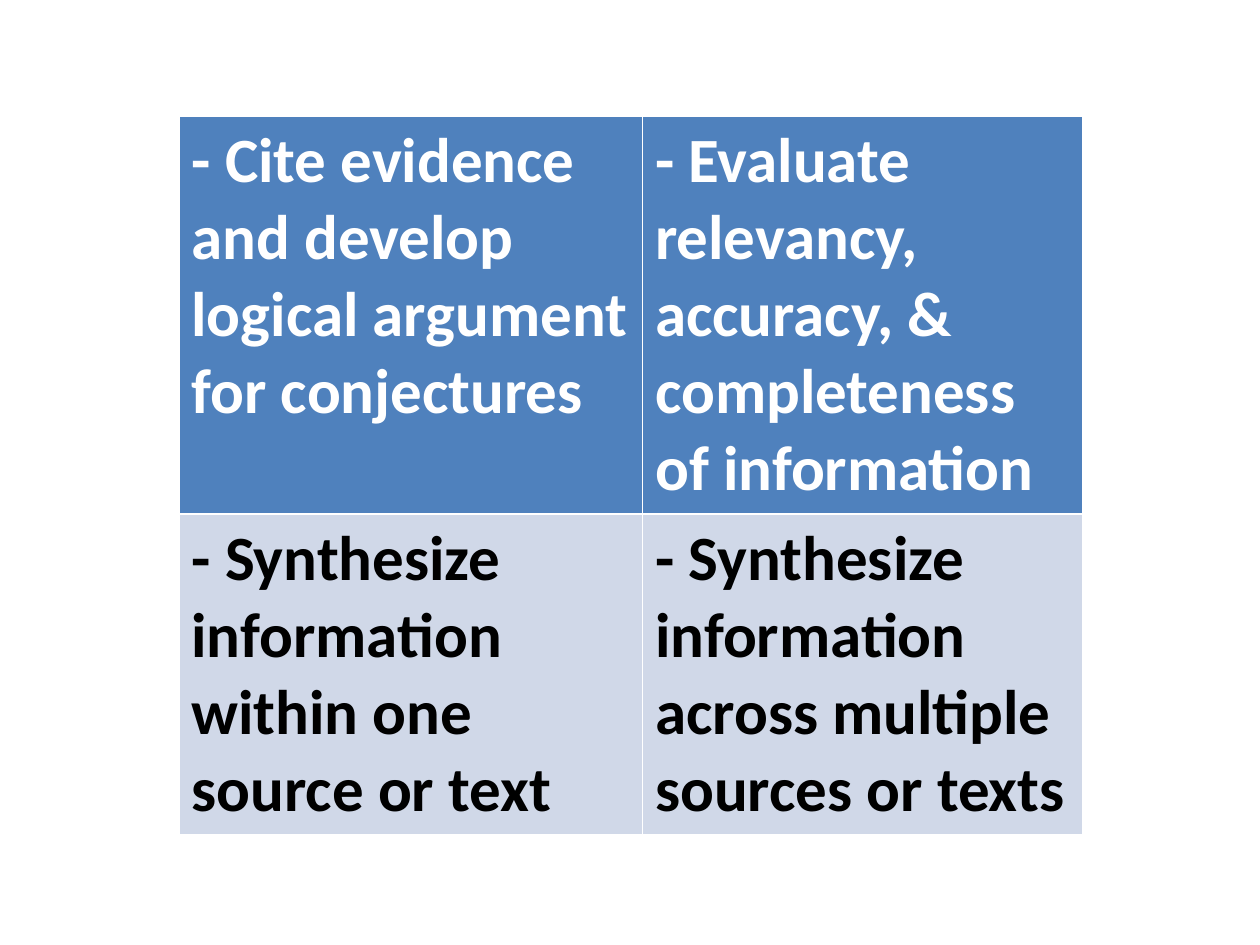
from lxml.etree import SubElement
from pptx import Presentation
from pptx.dml.color import RGBColor
from pptx.oxml.ns import qn
from pptx.util import Inches, Pt

WIDTH, HEIGHT = 10, 7.5
WHITE, BLACK, BLUE, PALE_BLUE = "FFFFFF", "000000", "4F81BD", "D0D8E8"

SKILLS = [
    ["- Cite evidence and develop logical argument for conjectures",
     "- Evaluate relevancy, accuracy, & completeness of information"],
    ["- Synthesize information within one source or text",
     "- Synthesize information across multiple sources or texts"],
]
ROW_COLORS = [(BLUE, WHITE), (PALE_BLUE, BLACK)]  # fill, text


def color(value):
    return RGBColor.from_string(value)


def write_text(text_frame, text, font="Calibri", size=36, bold=True, fill=BLACK):
    run = text_frame.paragraphs[0].add_run()
    run.text = text
    run.font.name = font
    run.font.size = Pt(size)
    run.font.bold = bold
    run.font.color.rgb = color(fill)


class SlideBuilder:
    """Holds the border style and the current slide."""

    border_color = WHITE
    border_width = 1

    def __init__(self, presentation):
        self.slide = presentation.slides.add_slide(presentation.slide_layouts[6])

    def add_borders(self, cell):
        properties = cell._tc.get_or_add_tcPr()
        for position, side in enumerate(("lnL", "lnR", "lnT", "lnB")):
            line = SubElement(properties, qn(f"a:{side}"), w=str(Pt(self.border_width)))
            fill = SubElement(line, qn("a:solidFill"))
            SubElement(fill, qn("a:srgbClr"), val=self.border_color)
            # Border lines must come before the cell's fill
            properties.insert(position, line)

    def add_table(self, rows, row_colors, left, top, column_widths, row_height, height):
        """Place a table; every length is a share of the slide's size."""
        shape = self.slide.shapes.add_table(
            len(rows), len(column_widths),
            Inches(left * WIDTH), Inches(top * HEIGHT),
            Inches(sum(column_widths) * WIDTH), Inches(height * HEIGHT))
        table = shape.table
        for column, width in zip(table.columns, column_widths):
            column.width = Inches(width * WIDTH)
        for row, texts, (fill, text_color) in zip(table.rows, rows, row_colors):
            row.height = Inches(row_height * HEIGHT)
            for cell, text in zip(row.cells, texts):
                cell.fill.solid()
                cell.fill.fore_color.rgb = color(fill)
                self.add_borders(cell)
                write_text(cell.text_frame, text, fill=text_color)
        # Rows grow with their text, so the frame is taller than their minimum
        shape.height = Inches(height * HEIGHT)


def main():
    presentation = Presentation()
    presentation.slide_width = Inches(WIDTH)
    presentation.slide_height = Inches(HEIGHT)

    # Table of skills
    builder = SlideBuilder(presentation)
    builder.add_table(SKILLS, ROW_COLORS, left=1.42 / WIDTH, top=0.92 / HEIGHT,
                      column_widths=(3.68 / WIDTH, 3.49 / WIDTH),
                      row_height=2.31 / HEIGHT, height=5.6 / HEIGHT)

    presentation.save("out.pptx")


if __name__ == "__main__":
    main()
